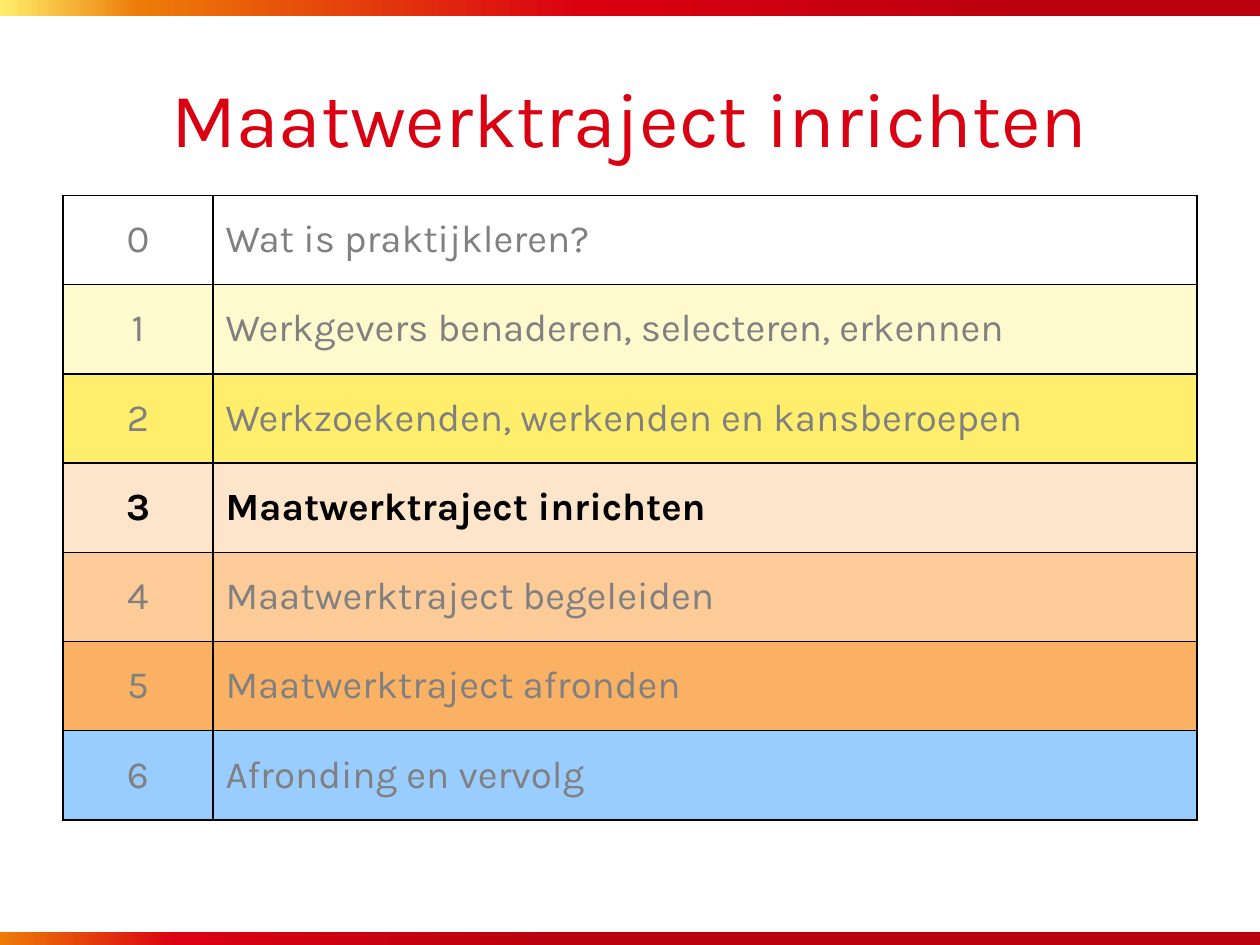
from lxml.etree import SubElement
from pptx import Presentation
from pptx.dml.color import RGBColor
from pptx.enum.shapes import MSO_SHAPE
from pptx.enum.text import MSO_ANCHOR, PP_ALIGN
from pptx.oxml.ns import qn
from pptx.util import Inches, Pt

FONT = "Karla"
BLACK = RGBColor(0x00, 0x00, 0x00)
GREY = RGBColor(0x80, 0x80, 0x80)
DARK_RED = RGBColor(0xBA, 0x00, 0x0E)
RED = RGBColor(0xDA, 0x00, 0x11)
ORANGE = RGBColor(0xED, 0x7C, 0x07)
YELLOW = RGBColor(0xFF, 0xEE, 0x6B)
PALE_YELLOW = RGBColor(0xFF, 0xF9, 0xCE)
PALE_ORANGE = RGBColor(0xFD, 0xE5, 0xCB)
LIGHT_ORANGE = RGBColor(0xFC, 0xCB, 0x98)
MID_ORANGE = RGBColor(0xFA, 0xB1, 0x64)
LIGHT_BLUE = RGBColor(0x99, 0xCC, 0xFF)

CURRENT_CHAPTER = 3
CHAPTERS = [
    ("Wat is praktijkleren?", None),
    ("Werkgevers benaderen, selecteren, erkennen", PALE_YELLOW),
    ("Werkzoekenden, werkenden en kansberoepen", YELLOW),
    ("Maatwerktraject inrichten", PALE_ORANGE),
    ("Maatwerktraject begeleiden", LIGHT_ORANGE),
    ("Maatwerktraject afronden", MID_ORANGE),
    ("Afronding en vervolg", LIGHT_BLUE),
]
TOP_STOPS = [(18, DARK_RED), (54, RED), (89, ORANGE), (100, YELLOW)]
BOTTOM_STOPS = [(56, DARK_RED), (86, RED), (100, ORANGE)]


def write_text(text_frame, text, *, size, color, bold=False, align=PP_ALIGN.LEFT):
    """Write one formatted paragraph into a text frame."""
    paragraph = text_frame.paragraphs[0]
    paragraph.alignment = align
    run = paragraph.add_run()
    run.text = text
    run.font.name = FONT
    run.font.size = Pt(size)
    run.font.bold = bold
    run.font.color.rgb = color


def add_gradient_bar(slide, top, stops):
    """Add a full-width bar with a gradient that runs from right to left."""
    shape = slide.shapes.add_shape(
        MSO_SHAPE.RECTANGLE, 0, Inches(top), Inches(10.02), Inches(0.13)
    )
    shape.shadow.inherit = False
    shape.line.fill.background()
    shape.fill.gradient()
    shape.fill.gradient_angle = 180
    stop_list = shape.element.spPr.find(".//" + qn("a:gsLst"))
    for old_stop in list(stop_list):
        stop_list.remove(old_stop)
    for percent, color in stops:
        stop = SubElement(stop_list, qn("a:gs"), pos=str(percent * 1000))
        SubElement(stop, qn("a:srgbClr"), val=str(color))


def add_title(slide, text):
    """Add the centred slide title."""
    box = slide.shapes.add_textbox(Inches(0.5), Inches(0.3), Inches(9), Inches(1.25))
    box.text_frame.word_wrap = True
    box.text_frame.vertical_anchor = MSO_ANCHOR.MIDDLE
    write_text(box.text_frame, text, size=44, color=RED, align=PP_ALIGN.CENTER)


def set_borders(cell):
    """Draw a thin black line on each side of a cell."""
    properties = cell._tc.get_or_add_tcPr()
    for side in ("lnL", "lnR", "lnT", "lnB"):
        line = SubElement(properties, qn(f"a:{side}"), w=str(Pt(1)))
        fill = SubElement(line, qn("a:solidFill"))
        SubElement(fill, qn("a:srgbClr"), val=str(BLACK))


def format_cell(cell, fill_color):
    """Set the borders, fill and anchor of a cell."""
    set_borders(cell)
    cell.vertical_anchor = MSO_ANCHOR.MIDDLE
    if fill_color is None:
        cell.fill.background()
    else:
        cell.fill.solid()
        cell.fill.fore_color.rgb = fill_color


def add_chapter_table(slide):
    """Add the chapter overview with the current chapter in bold."""
    table = slide.shapes.add_table(
        len(CHAPTERS), 2, Inches(0.5), Inches(1.55), Inches(9), Inches(4.96)
    ).table
    table.first_row = False
    table.horz_banding = False
    table.columns[0].width = Inches(1.19)
    table.columns[1].width = Inches(7.81)
    for number, (chapter, fill_color) in enumerate(CHAPTERS):
        current = number == CURRENT_CHAPTER
        contents = [(str(number), PP_ALIGN.CENTER), (chapter, PP_ALIGN.LEFT)]
        for column, (text, align) in enumerate(contents):
            cell = table.cell(number, column)
            format_cell(cell, fill_color)
            write_text(
                cell.text_frame,
                text,
                size=22,
                color=BLACK if current else GREY,
                bold=current,
                align=align,
            )


def main():
    """Build the slide and save the presentation."""
    presentation = Presentation()
    presentation.slide_width = Inches(10)
    presentation.slide_height = Inches(7.5)
    slide = presentation.slides.add_slide(presentation.slide_layouts[6])
    add_gradient_bar(slide, 0, TOP_STOPS)
    add_gradient_bar(slide, 7.4, BOTTOM_STOPS)
    add_title(slide, "Maatwerktraject inrichten")
    add_chapter_table(slide)
    presentation.save("out.pptx")


if __name__ == "__main__":
    main()
